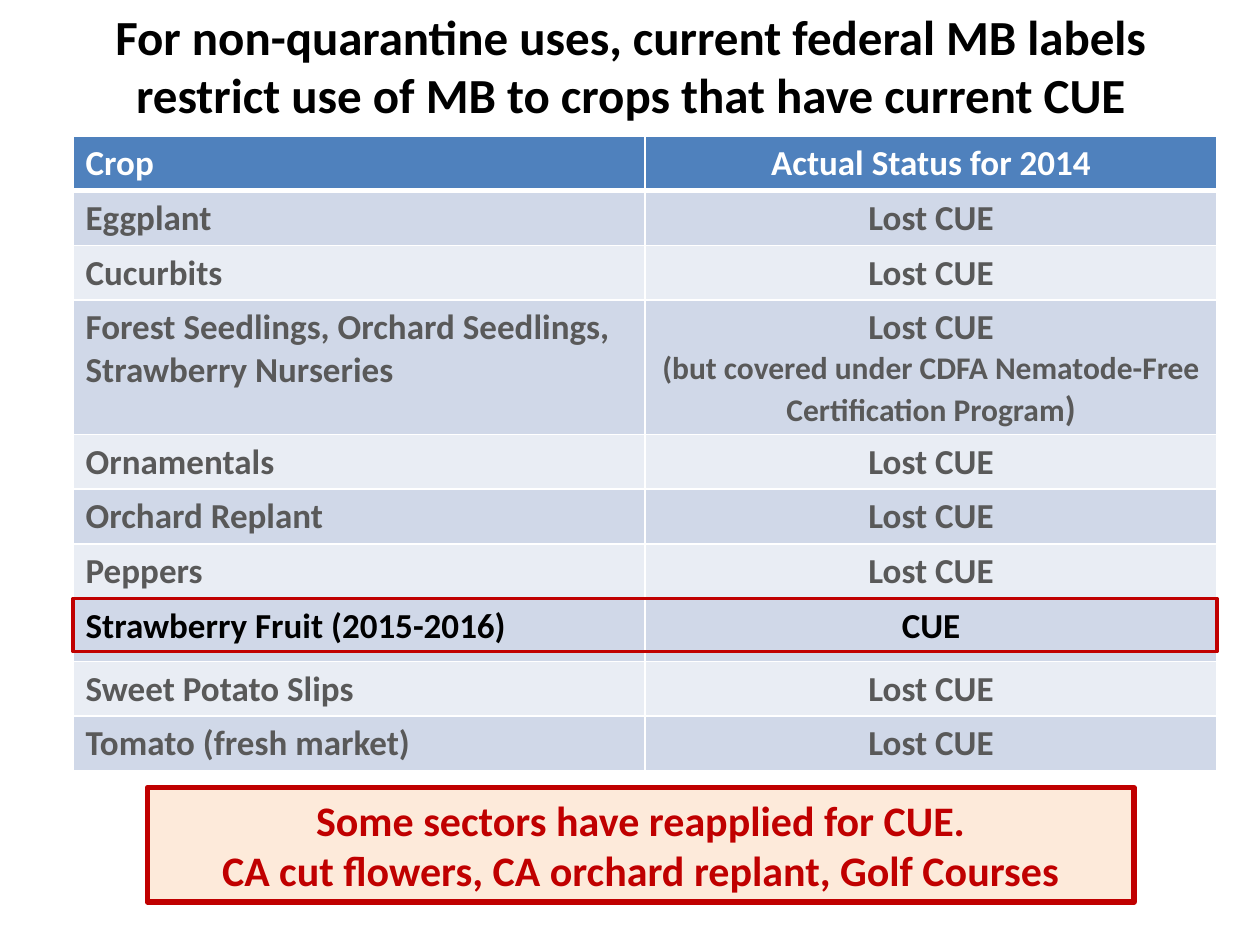
"""Builds a slide on the critical use exemption (CUE) status of crops."""
from lxml import etree
from pptx import Presentation
from pptx.dml.color import RGBColor
from pptx.enum.shapes import MSO_SHAPE
from pptx.enum.text import MSO_ANCHOR, MSO_AUTO_SIZE, PP_ALIGN
from pptx.oxml.ns import qn
from pptx.util import Inches, Pt

RECT = MSO_SHAPE.RECTANGLE
LEFT, CENTER = PP_ALIGN.LEFT, PP_ALIGN.CENTER
MIDDLE = MSO_ANCHOR.MIDDLE
FIT_SHAPE = MSO_AUTO_SIZE.SHAPE_TO_FIT_TEXT

FONT = "Calibri"
COLORS = {
    "black": "000000",
    "white": "FFFFFF",
    "gray": "595959",
    "header": "4F81BD",
    "band_dark": "D0D8E8",
    "band_light": "E9EDF4",
    "red": "C00000",
    "peach": "FDEADA",
}
TABLE_LEFT, TABLE_WIDTH = 0.58, 9.08
LOST = "Lost CUE"
CURRENT = "CUE"
NOTE = "(but covered under CDFA Nematode-Free Certification Program"
ROWS = [
    ("Crop", "Actual Status for 2014", 0.42),
    ("Eggplant", LOST, 0.33),
    ("Cucurbits", LOST, 0.33),
    ("Forest Seedlings, Orchard Seedlings,\nStrawberry Nurseries", LOST, 0.83),
    ("Ornamentals", LOST, 0.33),
    ("Orchard Replant", LOST, 0.25),
    ("Peppers", LOST, 0.33),
    ("Strawberry Fruit (2015-2016)", CURRENT, 0.5),
    ("Sweet Potato Slips", LOST, 0.35),
    ("Tomato (fresh market)", LOST, 0.41),
]
NURSERY_ROW = 3


def rgb(name):
    return RGBColor.from_string(COLORS[name])


def format_run(r, size, color):
    r.font.name = FONT
    r.font.size = Pt(size)
    r.font.bold = True
    r.font.color.rgb = rgb(color)


def write_text(tf, text, size, color, align=CENTER):
    tf.text = text
    tf.word_wrap = True
    for p in tf.paragraphs:
        p.alignment = align
        for r in p.runs:
            format_run(r, size, color)


def add_title(s, text):
    sp = s.shapes.add_textbox(Inches(0.42), Inches(0), Inches(9.17), Inches(1.04))
    write_text(sp.text_frame, text, 28, "black")
    sp.text_frame.auto_size = FIT_SHAPE


def add_box(s, left, top, width, height, line_width, fill=None):
    sp = s.shapes.add_shape(RECT, Inches(left), Inches(top), Inches(width), Inches(height))
    sp.shadow.inherit = False
    if fill:
        sp.fill.solid()
        sp.fill.fore_color.rgb = rgb(fill)
    else:
        sp.fill.background()
    sp.line.color.rgb = rgb("red")
    sp.line.width = Pt(line_width)
    return sp


def set_borders(cell, top, bottom):
    """Draws white cell borders; top and bottom are widths in points."""
    tcPr = cell._tc.get_or_add_tcPr()
    for side, width in (("L", 1), ("R", 1), ("T", top), ("B", bottom)):
        ln = etree.SubElement(tcPr, qn(f"a:ln{side}"), w=str(Pt(width)))
        fill = etree.SubElement(ln, qn("a:solidFill"))
        etree.SubElement(fill, qn("a:srgbClr"), val=COLORS["white"])


def add_note(cell):
    p = cell.text_frame.add_paragraph()
    p.alignment = CENTER
    for text, size in ((NOTE, 18), (")", 20)):
        r = p.add_run()
        r.text = text
        format_run(r, size, "gray")


def row_colors(i, status):
    if i == 0:
        return "header", "white"
    band = "band_dark" if i % 2 else "band_light"
    return band, "black" if status == CURRENT else "gray"


def add_status_table(s):
    height = sum(row[2] for row in ROWS)
    frame = s.shapes.add_table(len(ROWS), 2, Inches(TABLE_LEFT), Inches(1.08),
                               Inches(TABLE_WIDTH), Inches(height))
    table = frame.table
    for i, (crop, status, row_height) in enumerate(ROWS):
        table.rows[i].height = Inches(row_height)
        fill, color = row_colors(i, status)
        for j, (text, align) in enumerate(((crop, LEFT), (status, CENTER))):
            cell = table.cell(i, j)
            set_borders(cell, 3 if i == 1 else 1, 3 if i == 0 else 1)
            cell.fill.solid()
            cell.fill.fore_color.rgb = rgb(fill)
            write_text(cell.text_frame, text, 20, color, align)
    add_note(table.cell(NURSERY_ROW, 1))


def add_callout(s, text):
    sp = add_box(s, 1.17, 6.25, 7.83, 0.91, 3, "peach")
    tf = sp.text_frame
    write_text(tf, text, 24, "red")
    tf.vertical_anchor = MIDDLE
    tf.auto_size = FIT_SHAPE


def main():
    prs = Presentation()
    prs.slide_width, prs.slide_height = Inches(10), Inches(7.5)
    s = prs.slides.add_slide(prs.slide_layouts[6])
    add_title(s, "For non-quarantine uses, current federal MB labels "
                 "restrict use of MB to crops that have current CUE")
    add_status_table(s)
    add_callout(s, "Some sectors have reapplied for CUE.\n"
                   "CA cut flowers, CA orchard replant, Golf Courses")
    add_box(s, TABLE_LEFT, 4.75, TABLE_WIDTH, 0.42, 2)
    prs.save("out.pptx")


if __name__ == "__main__":
    main()
